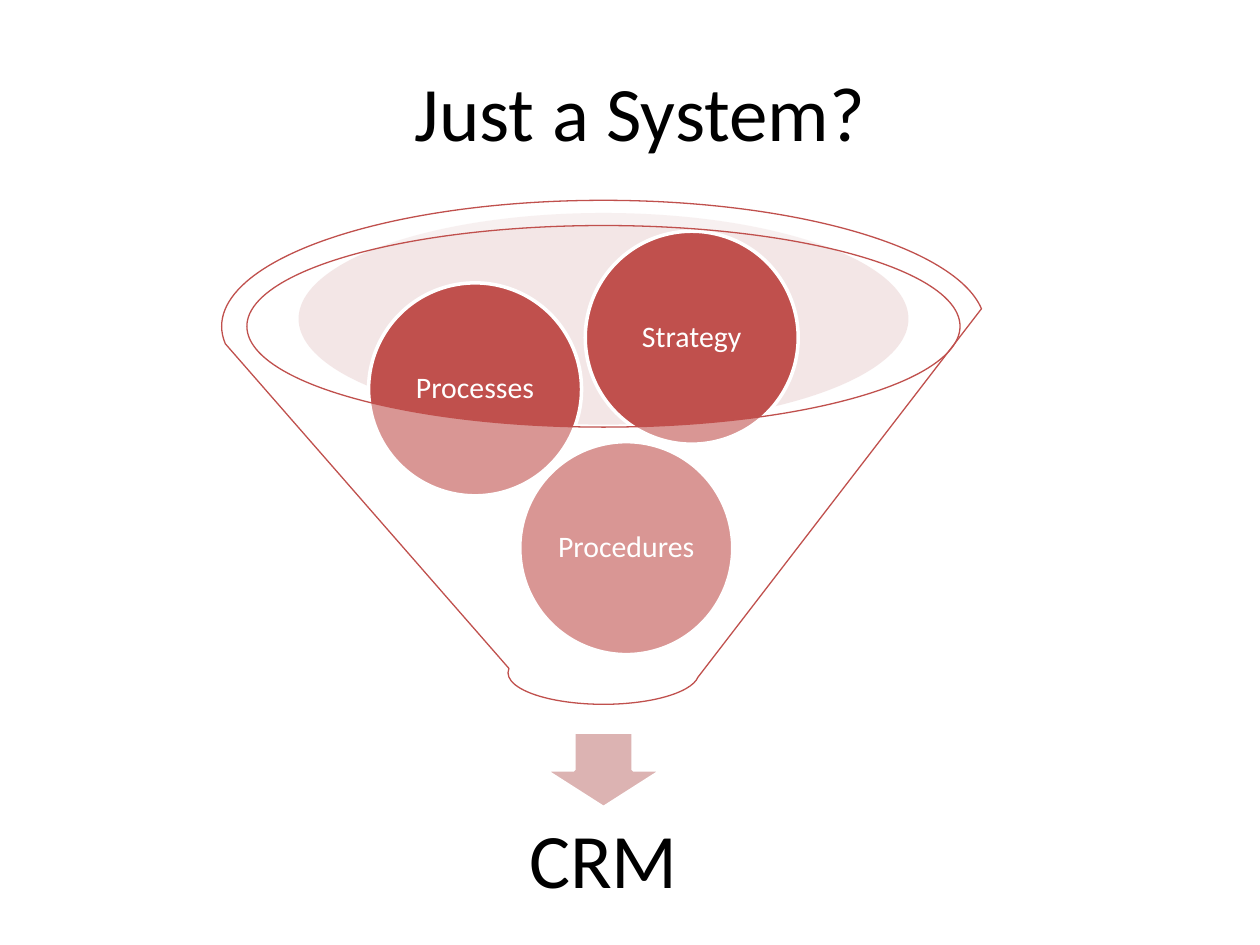
import pptx
import pptx.dml.color
import pptx.enum.shapes
import pptx.enum.text
import pptx.oxml.ns
import pptx.util
from lxml import etree

SHAPE = pptx.enum.shapes.MSO_SHAPE
ALIGN = pptx.enum.text.PP_ALIGN
ANCHOR = pptx.enum.text.MSO_ANCHOR
Inches, Pt = pptx.util.Inches, pptx.util.Pt

# Content
TITLE = "Just a System?"
RESULT = "CRM"
# label, centre of circle: offset from the funnel axis, height on the slide
INGREDIENTS = [
    ("Procedures", 0.18, 4.35),
    ("Processes", -1.02, 3.09),
    ("Strategy", 0.70, 2.68),
]

# Layout in inches
WIDTH, HEIGHT = 10, 7.5
AXIS = 4.79
DIAMETER = 1.69
RED, WHITE, BLACK = "C0504D", "FFFFFF", "000000"
HEADING = {"name": "Calibri", "size": Pt(44)}
LABEL = {"name": "Calibri", "size": Pt(17)}


def color(value):
    return pptx.dml.color.RGBColor.from_string(value)


def centred(offset, top, width, height):
    """Box centred at an offset from the funnel axis."""
    return [Inches(n) for n in (AXIS + offset - width / 2, top, width, height)]


def write(shape, text, font, text_color, inset, line_spacing=0.9):
    frame = shape.text_frame
    frame.text = text
    settings = {"word_wrap": True, "vertical_anchor": ANCHOR.MIDDLE}
    for side in ("left", "top", "right", "bottom"):
        settings[f"margin_{side}"] = Inches(inset)
    for name, value in settings.items():
        setattr(frame, name, value)
    paragraph = frame.paragraphs[0]
    paragraph.alignment = ALIGN.CENTER
    paragraph.line_spacing = line_spacing
    for name, value in font.items():
        setattr(paragraph.font, name, value)
    paragraph.font.color.rgb = color(text_color)


def draw(slide, preset, box, fill, opacity=100, line=None, line_width=2):
    shape = slide.shapes.add_shape(preset, *box)
    shape.shadow.inherit = False
    shape.fill.solid()
    shape.fill.fore_color.rgb = color(fill)
    if opacity < 100:
        srgb = shape.fill._xPr.find(".//" + pptx.oxml.ns.qn("a:srgbClr"))
        etree.SubElement(srgb, pptx.oxml.ns.qn("a:alpha"), val=str(opacity * 1000))
    if line:
        shape.line.color.rgb = color(line)
        shape.line.width = Pt(line_width)
    else:
        shape.line.fill.background()
    return shape


def main():
    deck = pptx.Presentation()
    deck.slide_width, deck.slide_height = Inches(WIDTH), Inches(HEIGHT)
    slide = deck.slides.add_slide(deck.slide_layouts[5])

    # Title
    title = slide.shapes.title
    title.left, title.top, title.width, title.height = (
        Inches(n) for n in (0.58, 0.25, 9, 1.25))
    write(title, TITLE, HEADING, BLACK, 0.05, 1)

    # Funnel mouth, arrow and result
    draw(slide, SHAPE.OVAL, centred(0, 1.69, 4.84, 1.68), "E2C2C2", opacity=40)
    draw(slide, SHAPE.DOWN_ARROW, centred(0, 5.81, 0.94, 0.6), "DCB3B2", line=WHITE)
    result = slide.shapes.add_textbox(*centred(0, 6.29, 4.5, 1.12))
    write(result, RESULT, HEADING, BLACK, 0.34)

    # Ingredients inside the funnel
    for label, offset, middle in INGREDIENTS:
        box = centred(offset, middle - DIAMETER / 2, DIAMETER, DIAMETER)
        circle = draw(slide, SHAPE.OVAL, box, RED, line=WHITE)
        write(circle, label, LABEL, WHITE, 0.02)

    # Translucent funnel in front
    draw(slide, SHAPE.FUNNEL, centred(0, 1.59, 6.06, 4), WHITE,
         opacity=40, line=RED, line_width=0.75)

    deck.save("out.pptx")


if __name__ == "__main__":
    main()
